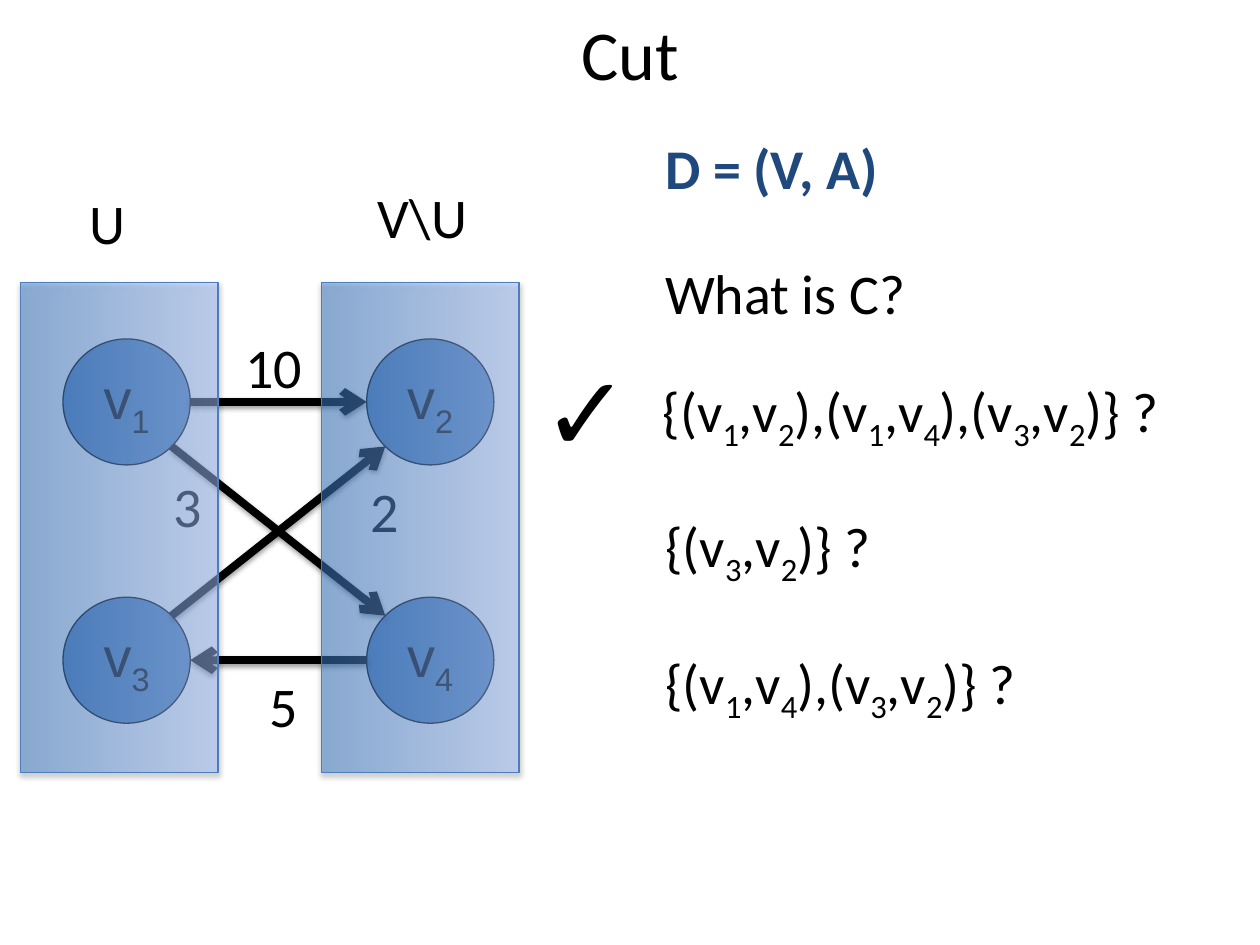
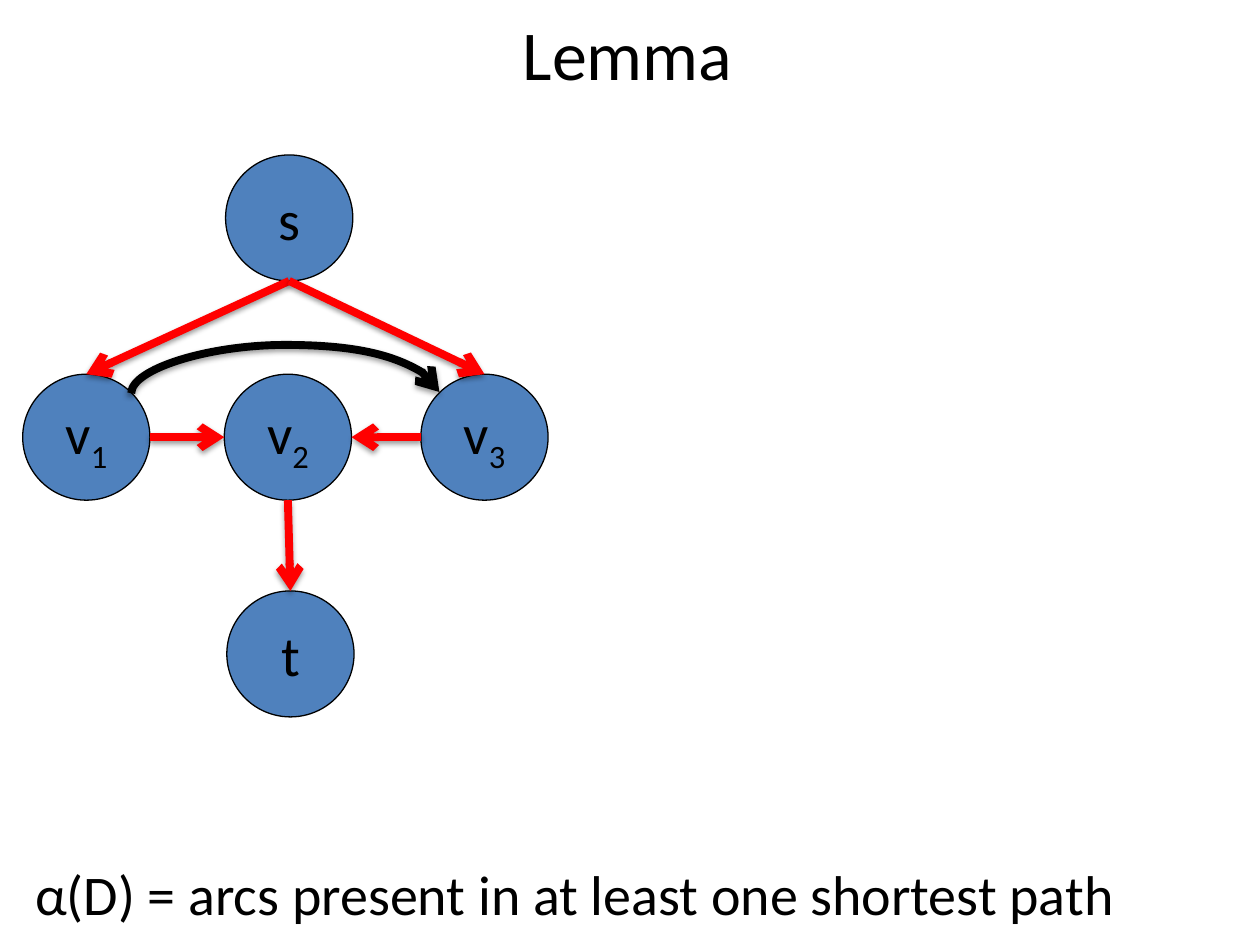
from dataclasses import dataclass
from math import cos, radians, sin

from lxml import etree
from pptx import Presentation
from pptx import util as u
from pptx.dml.color import RGBColor
from pptx.enum import shapes, text
from pptx.oxml import ns

COLORS = {
    "ink": "000000", "navy": "1F497D", "node": "4F81BD", "path": "FF0000",
    "panel_edge": "4B7EBC", "panel_dark": "3F80CE", "panel_light": "A4C4FF",
}
NODE_W, NODE_H = 1.01, 1.0
LABEL_H = 0.64
E, SE, S, SW, W, NW, N, NE = range(0, 360, 45)


@dataclass(frozen=True)
class Node:
    """A graph vertex; an underscore marks the next character as subscript."""
    label: str
    left: float
    top: float
    font: str = "Calibri"

    def site(self, angle: int) -> tuple[float, float]:
        """Return the border point at an angle, clockwise from east."""
        a = radians(angle)
        return (self.left + NODE_W / 2 * (1 + cos(a)),
                self.top + NODE_H / 2 * (1 + sin(a)))


@dataclass(frozen=True)
class Arc:
    """A directed edge between border points of two nodes."""
    tail: Node
    tail_angle: int
    head: Node
    head_angle: int
    color: str = "ink"


@dataclass(frozen=True)
class Label:
    """A one-line text box."""
    words: str
    left: float
    top: float
    width: float
    height: float = LABEL_H
    size: int = 32
    font: str = "Calibri"
    color: str = "ink"
    bold: bool = False


def rgb(name: str) -> RGBColor:
    """Look up a named colour."""
    return RGBColor.from_string(COLORS[name])


def sub(parent, tag: str, **attrs):
    """Append a DrawingML child element."""
    return etree.SubElement(parent, ns.qn(tag), attrs)


def add_shadow(effects, dist: float, alpha: int) -> None:
    """Put a soft downward shadow into an effect list."""
    shadow = sub(effects, "a:outerShdw", blurRad=str(u.Pt(3.1)),
                 dist=str(u.Pt(dist)), dir="5400000", rotWithShape="0")
    color = sub(shadow, "a:srgbClr", val=COLORS["ink"])
    sub(color, "a:alpha", val=str(alpha * 1000))


def write(tf, words: str, size: int, font: str, color: str = "ink",
          bold: bool = False, align=None) -> None:
    """Fill the first paragraph, lowering each character after an underscore."""
    p = tf.paragraphs[0]
    p.alignment = align
    p.font.size, p.font.name, p.font.bold = u.Pt(size), font, bold
    p.font.color.rgb = rgb(color)
    first, *rest = words.split("_")
    p.add_run().text = first
    for part in rest:
        r = p.add_run()
        r.text = part[0]
        r.font._element.set("baseline", "-25000")
        if part[1:]:
            p.add_run().text = part[1:]


def add_titled_slide(prs, title: str, left: float, width: float):
    """Add a slide with its title at the top."""
    s = prs.slides.add_slide(prs.slide_layouts[5])
    sp = s.shapes.title
    sp.left, sp.top, sp.width, sp.height = map(u.Inches, (left, 0.06, width, 0.71))
    sp.text_frame.vertical_anchor = text.MSO_ANCHOR.MIDDLE
    write(sp.text_frame, title, 40, "Calibri", align=text.PP_ALIGN.CENTER)
    return s


def add_label(s, label: Label) -> None:
    """Draw a text label."""
    box = map(u.Inches, (label.left, label.top, label.width, label.height))
    tf = s.shapes.add_textbox(*box).text_frame
    tf.word_wrap = False
    tf.auto_size = text.MSO_AUTO_SIZE.SHAPE_TO_FIT_TEXT
    write(tf, label.words, label.size, label.font, label.color, label.bold)


def add_node(s, node: Node) -> None:
    """Draw a vertex."""
    box = map(u.Inches, (node.left, node.top, NODE_W, NODE_H))
    sp = s.shapes.add_shape(shapes.MSO_SHAPE.OVAL, *box)
    sp.shadow.inherit = False
    sp.fill.solid()
    sp.fill.fore_color.rgb = rgb("node")
    sp.line.color.rgb = rgb("ink")
    sp.line.width = u.Pt(0.75)
    tf = sp.text_frame
    tf.word_wrap = False
    tf.vertical_anchor = text.MSO_ANCHOR.MIDDLE
    write(tf, node.label, 32, node.font, align=text.PP_ALIGN.CENTER)


def add_arrow(s, kind, start: tuple[float, float], end: tuple[float, float],
              color: str):
    """Draw a thick arrow with a shadow."""
    sp = s.shapes.add_connector(kind, *map(u.Inches, (*start, *end)))
    sp.line.color.rgb = rgb(color)
    sp.line.width = u.Pt(4.5)
    sub(sp.line._get_or_add_ln(), "a:tailEnd", type="arrow")
    add_shadow(sub(sp._element.spPr, "a:effectLst"), 1.6, 38)
    return sp


def add_arc(s, arc: Arc) -> None:
    """Draw a straight edge."""
    add_arrow(s, shapes.MSO_CONNECTOR.STRAIGHT, arc.tail.site(arc.tail_angle),
              arc.head.site(arc.head_angle), arc.color)


def add_bowed_arc(s, arc: Arc, rise: float) -> None:
    """Draw an edge that bows upwards between two nodes at one height."""
    x1, y = arc.tail.site(arc.tail_angle)
    x2, _ = arc.head.site(arc.head_angle)
    mid, half, drop = (x1 + x2) / 2, (x2 - x1) / 2, 0.01
    sp = add_arrow(s, shapes.MSO_CONNECTOR.CURVE, (mid + drop / 2, y + half),
                   (mid - drop / 2, y - half), arc.color)
    sp._element.spPr.find(ns.qn("a:xfrm")).set("rot", "5400000")
    guides = sp._element.spPr.find(ns.qn("a:prstGeom")).find(ns.qn("a:avLst"))
    sub(guides, "a:gd", name="adj1", fmla=f"val {round(rise / drop * 100000)}")


def add_panel(s, left: float) -> None:
    """Draw a translucent upright panel over one side of the cut."""
    box = map(u.Inches, (left, 3.4, 3.89, 1.57))
    sp = s.shapes.add_shape(shapes.MSO_SHAPE.RECTANGLE, *box)
    sp.rotation = 90
    sp.fill.gradient()
    sp.fill.gradient_angle = 90
    for stop, color in zip(sp.fill.gradient_stops, ("panel_dark", "panel_light")):
        stop.color.rgb = rgb(color)
    for clr in sp._element.spPr.iter(ns.qn("a:srgbClr")):
        sub(clr, "a:alpha", val="50000")
    sp.line.color.rgb = rgb("panel_edge")
    sp.line.width = u.Pt(0.75)
    sp.shadow.inherit = False
    add_shadow(sp._element.spPr.find(ns.qn("a:effectLst")), 1.8, 35)


def build_cut(prs) -> None:
    """Build the slide on cuts."""
    s = add_titled_slide(prs, "Cut", 0.5, 9)
    v1, v2, v3, v4 = nodes = [
        Node(f"v_{2 * row + col + 1}", 0.5 + 2.41 * col, 2.69 + 2.05 * row, "Arial")
        for row in range(2) for col in range(2)]
    for label in (
        Label("What is C?", 5.18, 2, 2.4),
        Label("D = (V, A)", 5.18, 1.01, 2.15, color="navy", bold=True),
        Label("V\\U", 2.9, 1.4, 0.95),
        Label("U", 0.61, 1.45, 0.53),
        Label("{(v_1,v_2),(v_1,v_4),(v_3,v_2)} ?", 5.16, 2.94, 4.91),
        Label("{(v_1,v_4),(v_3,v_2)} ?", 5.18, 5.1, 3.41),
        Label("{(v_3,v_2)} ?", 5.18, 4.01, 2.08),
        Label("✓", 4.21, 2.7, 0.84, 1.11, 60, "Arial"),
    ):
        add_label(s, label)
    for node in nodes:
        add_node(s, node)
    for arc in (Arc(v1, E, v2, W), Arc(v1, SE, v4, NW),
                Arc(v3, NE, v2, SW), Arc(v4, W, v3, E)):
        add_arc(s, arc)
    for capacity in (Label("10", 1.85, 2.59, 0.7), Label("5", 2.04, 5.28, 0.45),
                     Label("3", 1.28, 3.69, 0.45), Label("2", 2.84, 3.73, 0.45)):
        add_label(s, capacity)
    for left in (-1, 1.39):
        add_panel(s, left)


def build_lemma(prs) -> None:
    """Build the slide on shortest paths."""
    s = add_titled_slide(prs, "Lemma", 0.05, 9.86)
    v1, v2, v3, source, sink = nodes = (
        Node("v_1", 0.18, 2.97), Node("v_2", 1.78, 2.97), Node("v_3", 3.34, 2.97),
        Node("s", 1.79, 1.23), Node("t", 1.8, 4.69))
    for node in nodes:
        add_node(s, node)
    for ends in ((v1, E, v2, W), (source, S, v1, N), (v2, S, sink, N),
                 (source, S, v3, N), (v3, W, v2, E)):
        add_arc(s, Arc(*ends, "path"))
    add_label(s, Label("α(D) = arcs present in at least one shortest path",
                       0.18, 6.77, 9.7))
    add_bowed_arc(s, Arc(v1, NE, v3, NW), 0.39)


def main() -> None:
    """Build and save the presentation."""
    prs = Presentation()
    prs.slide_width, prs.slide_height = u.Inches(10), u.Inches(7.5)
    build_cut(prs)
    build_lemma(prs)
    prs.save("out.pptx")


if __name__ == "__main__":
    main()
